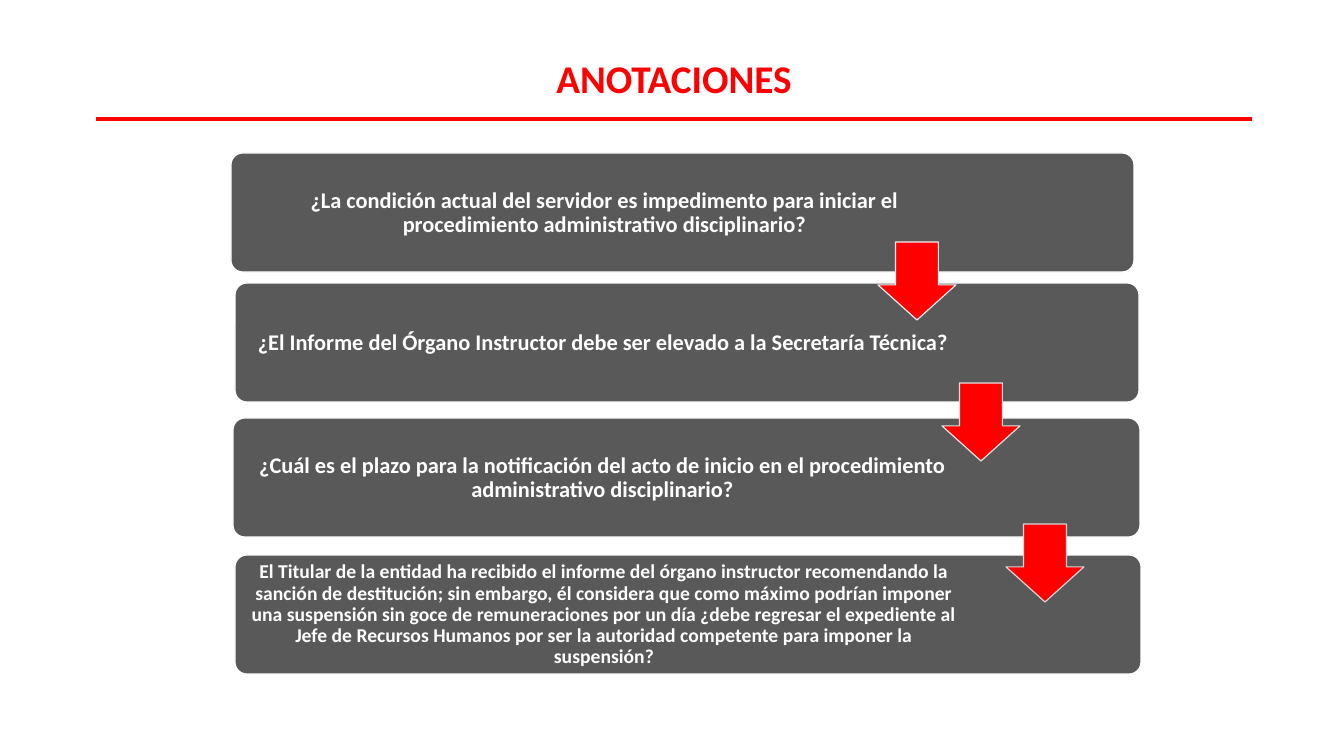
from pptx import Presentation
from pptx.dml.color import RGBColor
from pptx.enum.shapes import MSO_CONNECTOR as Connector, MSO_SHAPE as Shape
from pptx.enum.text import MSO_ANCHOR as Anchor, PP_ALIGN as Align
from pptx.oxml.ns import qn
from pptx.util import Emu, Pt
from lxml.etree import SubElement

RED = RGBColor(0xFF, 0x00, 0x00)
GRAY = RGBColor(0x59, 0x59, 0x59)
WHITE = RGBColor(0xFF, 0xFF, 0xFF)
ARROW_EDGES = [RGBColor(level, level, level) for level in (0xF0, 0xE4, 0xD8)]

# left, top, width, text width, text size, inset, question
QUESTIONS = [
    (231, 153, 903, 741, 16, 7,
     "¿La condición actual del servidor es impedimento para iniciar el "
     "procedimiento administrativo disciplinario?"),
    (235, 283, 904, 730, 16, 7,
     "¿El Informe del Órgano Instructor debe ser elevado a la Secretaría Técnica?"),
    (233, 418, 907, 733, 16, 7,
     "¿Cuál es el plazo para la notificación del acto de inicio en el "
     "procedimiento administrativo disciplinario?"),
    (235, 555, 906, 732, 14, 6,
     "El Titular de la entidad ha recibido el informe del órgano instructor "
     "recomendando la sanción de destitución; sin embargo, él considera que como "
     "máximo podrían imponer una suspensión sin goce de remuneraciones por un día "
     "¿debe regresar el expediente al Jefe de Recursos Humanos por ser la "
     "autoridad competente para imponer la suspensión?"),
]
CARD_HEIGHT = 119
ARROW_SIZE = 78


def px(*lengths):
    return [Emu(round(length * 914400 / 100.8)) for length in lengths]


class Page:
    font = "Calibri"
    edge_width = Pt(0.85)

    def __init__(self, deck):
        self.shapes = deck.slides.add_slide(deck.slide_layouts[6]).shapes

    def rule(self, x1, y1, x2, y2, color, width):
        line = self.shapes.add_connector(Connector.STRAIGHT, *px(x1, y1, x2, y2))
        line.line.color.rgb = color
        line.line.width = Pt(width)
        SubElement(line._element.spPr, qn("a:effectLst"))

    def shape(self, kind, left, top, width, height, fill, edge, adjustments):
        shape = self.shapes.add_shape(kind, *px(left, top, width, height))
        shape.shadow.inherit = False
        shape.fill.solid()
        shape.fill.fore_color.rgb = fill
        shape.line.color.rgb = edge
        shape.line.width = self.edge_width
        for index, value in enumerate(adjustments):
            shape.adjustments[index] = value

    def text(self, left, top, width, height, words, size, color,
             inset=None, anchor=Anchor.TOP, spacing=None):
        box = self.shapes.add_textbox(*px(left, top, width, height))
        frame = box.text_frame
        frame.word_wrap = True
        frame.vertical_anchor = anchor
        if inset is not None:
            (margin,) = px(inset)
            frame.margin_left = frame.margin_right = margin
            frame.margin_top = frame.margin_bottom = margin
        para = frame.paragraphs[0]
        para.text = words
        para.alignment = Align.CENTER
        para.line_spacing = spacing
        para.font.name = self.font
        para.font.size = Pt(size)
        para.font.bold = True
        para.font.color.rgb = color


def main():
    deck = Presentation()
    deck.slide_width, deck.slide_height = px(1344, 756)
    page = Page(deck)

    # Heading and rule
    page.rule(96, 119, 1252, 119, RED, 2.25)
    page.text(96, 49, 1156, 57, "ANOTACIONES", 28, RED)

    # Question cards
    for left, top, width, text_width, size, inset, question in QUESTIONS:
        page.shape(Shape.ROUNDED_RECTANGLE, left, top, width, CARD_HEIGHT,
                   GRAY, WHITE, [0.1])
        page.text(left + 3, top + 4, text_width, CARD_HEIGHT - 7, question, size,
                  WHITE, inset, Anchor.MIDDLE, 0.9)

    # Arrows stepping down from card to card
    for step, edge in enumerate(ARROW_EDGES):
        page.shape(Shape.DOWN_ARROW, 878 + 64 * step, 242 + 141 * step,
                   ARROW_SIZE, ARROW_SIZE, RED, edge, [0.55, 0.45])

    deck.save("out.pptx")


if __name__ == "__main__":
    main()
